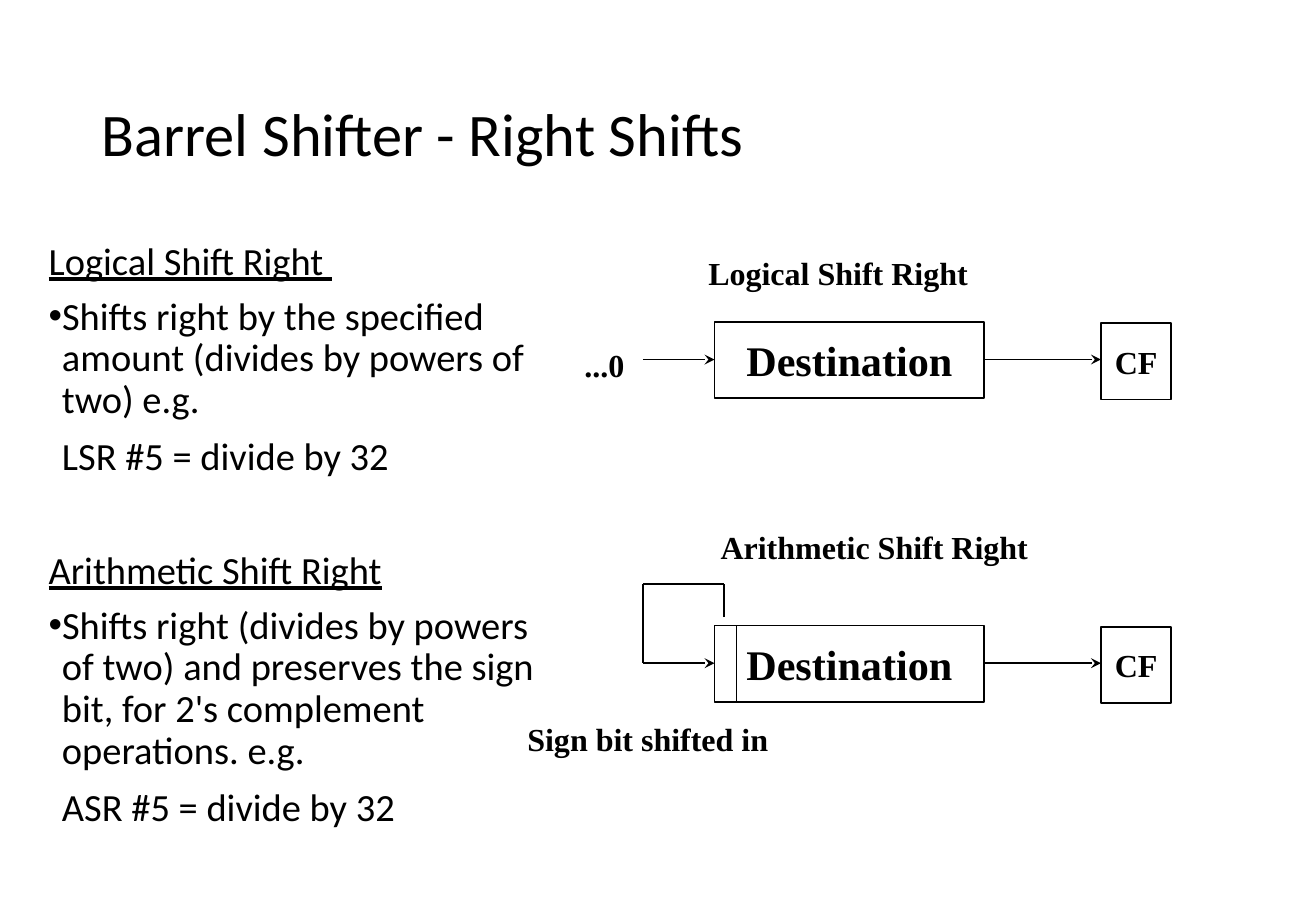
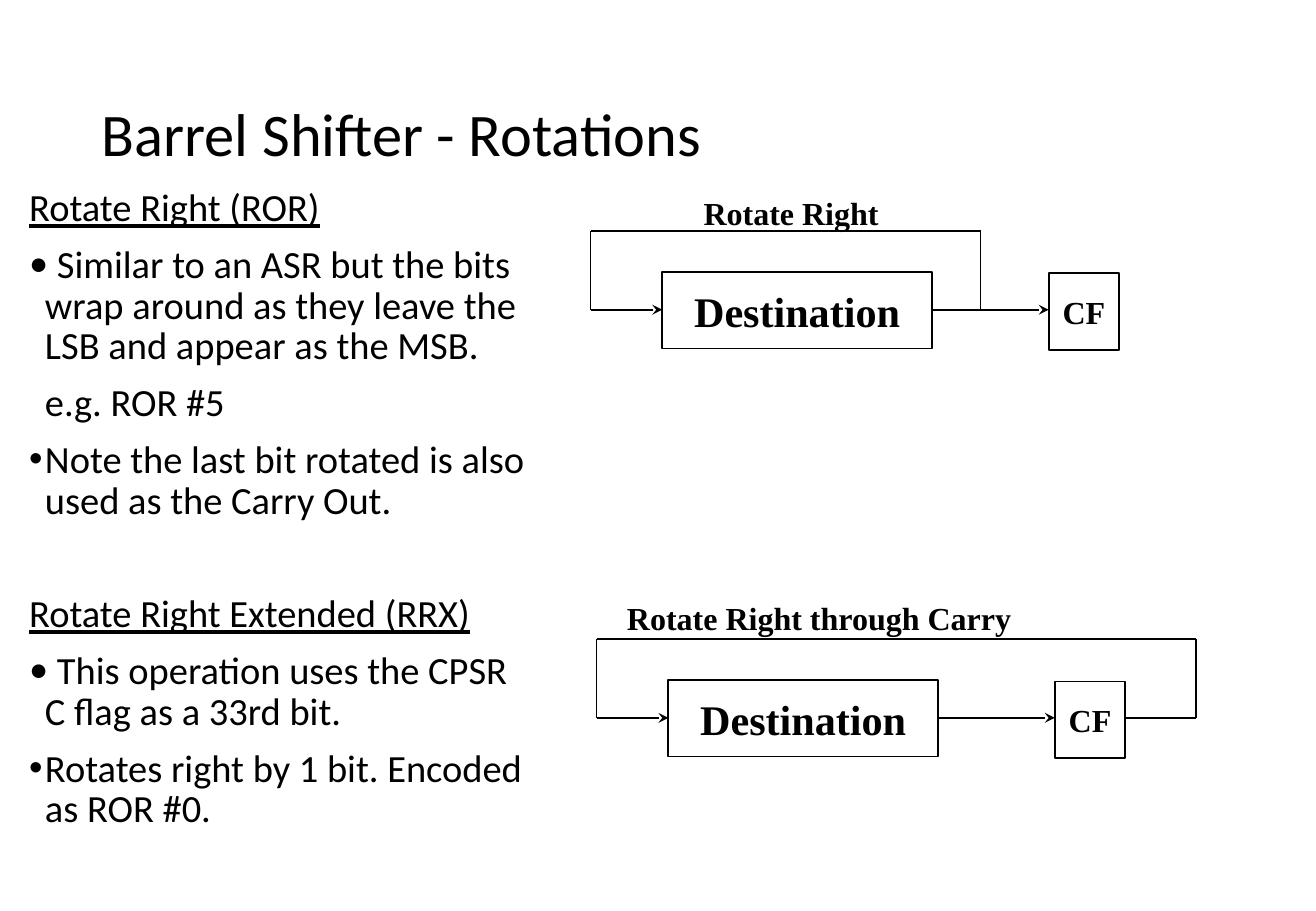
from dataclasses import dataclass
from itertools import pairwise

from lxml.etree import SubElement
from pptx import Presentation
from pptx.dml.color import RGBColor
from pptx.enum.shapes import MSO_CONNECTOR, MSO_SHAPE
from pptx.enum.text import MSO_ANCHOR, PP_ALIGN
from pptx.oxml.ns import qn
from pptx.slide import Slide
from pptx.text.text import TextFrame
from pptx.util import Emu, Pt

# Shared look; lengths are px at 100 to the inch
EMU_PER_PX = 9144
COLORS = {"ink": "000000", "paper": "FFFFFF"}
SANS, SERIF = "Calibri", "Times New Roman"
TITLE_SIZE, BODY_SIZE, BOX_SIZE, LABEL_SIZE = 35.8, 22.8, 25, 19

# Diagram geometry, measured from the destination box
BOX_WIDTH, BOX_HEIGHT, FLAG_WIDTH = 222, 63, 58
FLAG_OFFSET, WIRE_DROP, INPUT_LENGTH, LOOP_RISE = 318, 31, 59, 34


@dataclass(frozen=True)
class Line:
    """One paragraph of body text."""
    text: str
    heading: bool = False
    bullet_font: str = ""
    spacing: float = 0.88
    before: float = 9.6


@dataclass(frozen=True)
class Label:
    text: str
    left: int
    top: int
    width: int


@dataclass(frozen=True)
class Diagram:
    """Register box and carry flag; the loop runs from the tap back to the input."""
    left: int
    top: int
    tap: tuple[tuple[int, int], ...] = ()
    sign_bit: bool = False


@dataclass(frozen=True)
class Page:
    title: str
    body_area: tuple[int, int, int, int]
    hanging: int
    body: tuple[Line, ...]
    diagrams: tuple[Diagram, ...]
    labels: tuple[Label, ...]


def px(length: int) -> Emu:
    return Emu(length * EMU_PER_PX)


def color(name: str) -> RGBColor:
    return RGBColor.from_string(COLORS[name])


def add_text_box(slide: Slide, left: int, top: int, width: int, height: int,
                 side: int = 7, edge: int = 3) -> TextFrame:
    frame = slide.shapes.add_textbox(px(left), px(top), px(width), px(height)).text_frame
    frame.word_wrap = True
    frame.margin_left = frame.margin_right = px(side)
    frame.margin_top = frame.margin_bottom = px(edge)
    return frame


def add_span(para, text: str, size: float, font: str, bold: bool = False,
             underline: bool = False) -> None:
    span = para.add_run()
    span.text = text
    span.font.name, span.font.size = font, Pt(size)
    span.font.bold, span.font.underline = bold, underline
    span.font.color.rgb = color("ink")


def add_title(slide: Slide, text: str) -> None:
    frame = add_text_box(slide, 74, 40, 934, 145, 10, 5)
    frame.vertical_anchor = MSO_ANCHOR.MIDDLE
    para = frame.paragraphs[0]
    para.line_spacing = 0.9
    add_span(para, text, TITLE_SIZE, SANS)


def add_body(slide: Slide, page: Page) -> None:
    frame = add_text_box(slide, *page.body_area)
    for index, line in enumerate(page.body):
        para = frame.add_paragraph() if index else frame.paragraphs[0]
        para.line_spacing = line.spacing
        para.space_before = Pt(line.before if index else 0)
        properties = para._p.get_or_add_pPr()
        if not line.heading:
            properties.set("marL", str(px(page.hanging)))
        if line.bullet_font:
            properties.set("indent", str(-px(page.hanging)))
            SubElement(properties, qn("a:buFont"), typeface=line.bullet_font)
            SubElement(properties, qn("a:buChar"), char="•")
        add_span(para, line.text, BODY_SIZE, SANS, underline=line.heading)


def add_label(slide: Slide, label: Label) -> None:
    para = add_text_box(slide, label.left, label.top, label.width, 39).paragraphs[0]
    para.line_spacing = 1.02
    add_span(para, label.text, LABEL_SIZE, SERIF, bold=True)


def add_box(slide: Slide, text: str, left: int, top: int, width: int, size: float) -> None:
    box = slide.shapes.add_shape(MSO_SHAPE.RECTANGLE, px(left), px(top),
                                 px(width), px(BOX_HEIGHT))
    box.shadow.inherit = False
    box.fill.background()
    box.line.color.rgb, box.line.width = color("ink"), Pt(1)
    frame = box.text_frame
    frame.word_wrap = False
    frame.vertical_anchor = MSO_ANCHOR.MIDDLE
    para = frame.paragraphs[0]
    para.alignment = PP_ALIGN.CENTER
    add_span(para, text, size, SERIF, bold=True)


def add_wire(slide: Slide, start: tuple[int, int], end: tuple[int, int],
             arrow: bool = False) -> None:
    wire = slide.shapes.add_connector(MSO_CONNECTOR.STRAIGHT, px(start[0]), px(start[1]),
                                      px(end[0]), px(end[1]))
    wire.line.color.rgb, wire.line.width = color("ink"), Pt(1)
    properties = wire._element.spPr
    if arrow:
        SubElement(properties.find(qn("a:ln")), qn("a:tailEnd"), type="stealth")
    SubElement(properties, qn("a:effectLst"))


def add_diagram(slide: Slide, diagram: Diagram) -> None:
    left, top = diagram.left, diagram.top
    wire_y, input_x, flag_x = top + WIRE_DROP, left - INPUT_LENGTH, left + FLAG_OFFSET
    add_box(slide, "Destination", left, top, BOX_WIDTH, BOX_SIZE)
    add_box(slide, "CF", flag_x, top + 1, FLAG_WIDTH, LABEL_SIZE)
    add_wire(slide, (input_x, wire_y), (left, wire_y), arrow=True)
    add_wire(slide, (left + BOX_WIDTH, wire_y), (flag_x, wire_y), arrow=True)
    if diagram.tap:
        points = [(left + x, top + y) for x, y in diagram.tap]
        loop_y = top - LOOP_RISE
        points += [(points[-1][0], loop_y), (input_x, loop_y), (input_x, wire_y)]
        for start, end in pairwise(points):
            add_wire(slide, start, end)
    if diagram.sign_bit:
        add_wire(slide, (left + 18, top), (left + 18, top + BOX_HEIGHT))


PAGES = (
    Page(
        "Barrel Shifter - Right Shifts", (33, 197, 432, 504), 11,
        (
            Line("Logical Shift Right ", heading=True),
            Line("Shifts right by the specified amount (divides by powers of two) e.g.",
                 bullet_font="Arial", spacing=0.9, before=8.1),
            Line("LSR #5 = divide by 32"),
            Line("Arithmetic Shift Right", heading=True, before=43.4),
            Line("Shifts right (divides by powers of two) and preserves the sign bit, "
                 "for 2's complement operations. e.g.",
                 bullet_font="Arial", spacing=0.9, before=8.1),
            Line("ASR #5 = divide by 32"),
        ),
        (
            Diagram(588, 265),
            Diagram(588, 515, tap=((8, -7),), sign_bit=True),
        ),
        (
            Label("Logical Shift Right", 576, 205, 334),
            Label("Arithmetic Shift Right", 586, 431, 294),
            Label("...0", 474, 281, 53),
            Label("Sign bit shifted in", 427, 589, 353),
        ),
    ),
    Page(
        "Barrel Shifter - Rotations", (17, 153, 425, 559), 13,
        (
            Line("Rotate Right (ROR)", heading=True),
            Line(" Similar to an ASR but the bits wrap around as they leave the LSB "
                 "and appear as the MSB.", bullet_font=SANS),
            Line("e.g. ROR #5"),
            Line("Note the last bit rotated is also used as the Carry Out.",
                 bullet_font="Arial"),
            Line("Rotate Right Extended (RRX)", heading=True, before=43.4),
            Line(" This operation uses the CPSR C flag as a 33rd bit.", bullet_font=SANS),
            Line("Rotates right by 1 bit. Encoded as ROR #0.", bullet_font="Arial"),
        ),
        (
            Diagram(545, 224, tap=((262, WIRE_DROP),)),
            Diagram(550, 560, tap=((FLAG_OFFSET + FLAG_WIDTH, WIRE_DROP), (434, WIRE_DROP))),
        ),
        (
            Label("Rotate Right", 572, 156, 223),
            Label("Rotate Right through Carry", 509, 489, 350),
        ),
    ),
)


def main() -> None:
    deck = Presentation()
    deck.slide_width, deck.slide_height = px(1083), px(750)
    for page in PAGES:
        slide = deck.slides.add_slide(deck.slide_layouts[6])
        slide.background.fill.solid()
        slide.background.fill.fore_color.rgb = color("paper")
        add_title(slide, page.title)
        add_body(slide, page)
        for diagram in page.diagrams:
            add_diagram(slide, diagram)
        for label in page.labels:
            add_label(slide, label)
    deck.save("out.pptx")


if __name__ == "__main__":
    main()
